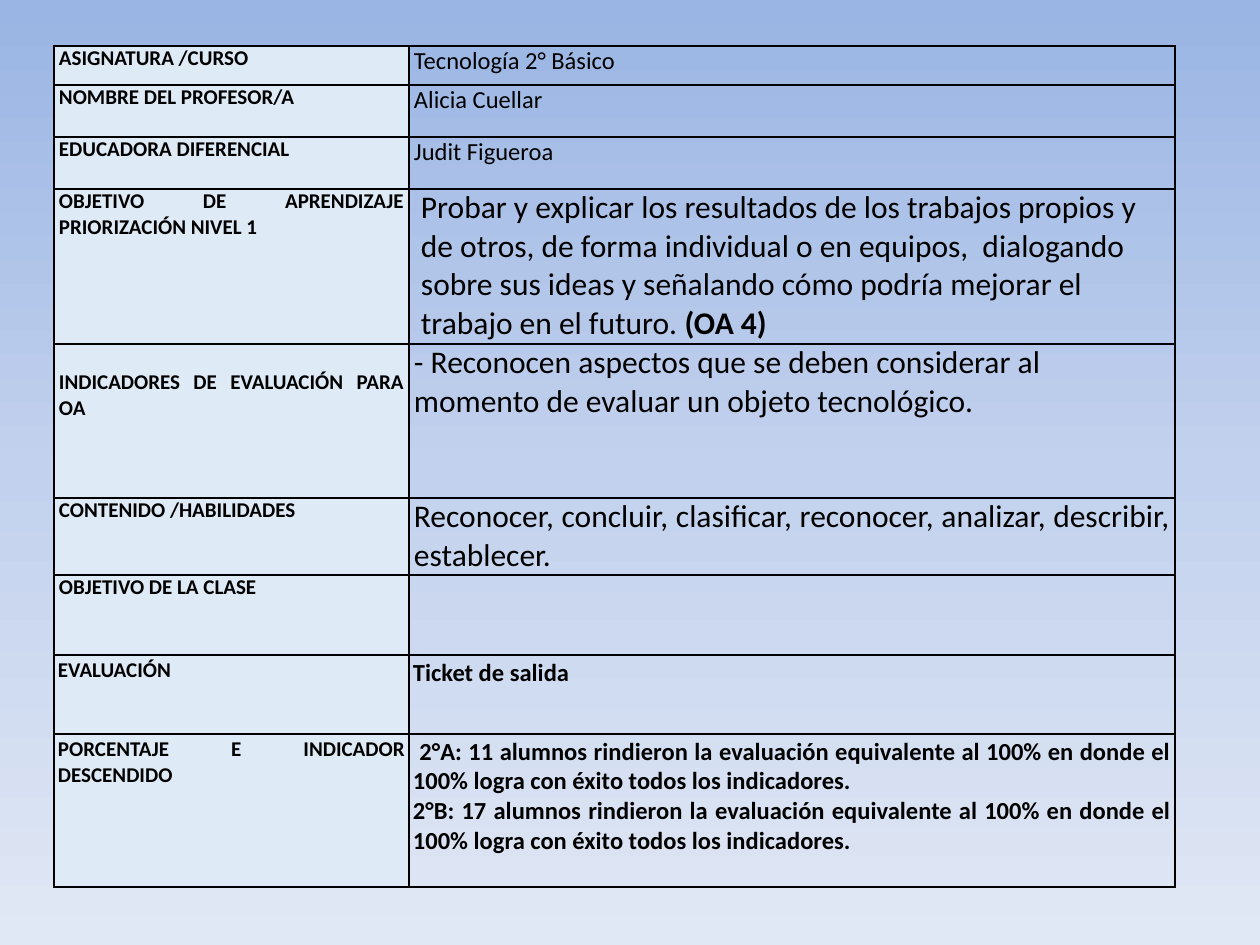
from lxml import etree
from pptx import Presentation
from pptx.dml.color import RGBColor
from pptx.enum.text import PP_ALIGN
from pptx.oxml import parse_xml
from pptx.oxml.ns import qn
from pptx.util import Emu, Pt

LEFT, JUSTIFY = PP_ALIGN.LEFT, PP_ALIGN.JUSTIFY
PX = 914400 // 126
FONT, BLACK, LABEL_FILL = "Calibri", "000000", "DEEAF6"
BACKGROUND = [(0, "9AB5E4"), (50, "C2D1ED"), (100, "E1E8F5")]

TABLE_LEFT, TABLE_TOP = 54, 46
COLUMNS = [355, 766]
SIDE, NARROW, WIDE = (5, 0), (4, 3), (12, 0)  # horizontal, vertical cell margins

# Each paragraph is a list of (text, bold) runs
ROWS = [
    dict(height=39, label="ASIGNATURA /CURSO", size=14,
         value=[[("Tecnología 2° Básico", False)]]),
    dict(height=52, label="NOMBRE DEL PROFESOR/A", size=14,
         value=[[("Alicia Cuellar", False)]]),
    dict(height=52, label="EDUCADORA DIFERENCIAL", size=14,
         value=[[("Judit Figueroa", False)]]),
    dict(height=155, label="OBJETIVO DE APRENDIZAJE PRIORIZACIÓN NIVEL 1",
         size=18, align=LEFT, value_margins=WIDE,
         value=[[("Probar y explicar los resultados de los trabajos propios y "
                  "de otros, de forma individual o en equipos,  dialogando "
                  "sobre sus ideas y señalando cómo podría mejorar el "
                  "trabajo en el futuro. ", False), ("(OA 4)", True)]]),
    dict(height=154, label="INDICADORES DE EVALUACIÓN PARA OA",
         label_margins=(5, 26), size=18, align=LEFT,
         value=[[("- Reconocen aspectos que se deben considerar al momento "
                  "de evaluar un objeto tecnológico.", False)]]),
    dict(height=76, label="CONTENIDO /HABILIDADES", size=18,
         value=[[("Reconocer, concluir, clasificar, reconocer, analizar, "
                  "describir, establecer.", False)]]),
    dict(height=80, label="OBJETIVO DE LA CLASE", size=18, value=[]),
    dict(height=79, label="EVALUACIÓN", label_margins=NARROW,
         value_margins=NARROW, size=14, value=[[("Ticket de salida", True)]]),
    dict(height=153, label="PORCENTAJE E INDICADOR DESCENDIDO",
         label_margins=NARROW, value_margins=NARROW, size=14,
         value=[[(f"{group} alumnos rindieron la evaluación equivalente al "
                  "100% en donde el 100% logra con éxito todos los "
                  "indicadores.", True)] for group in (" 2°A: 11", "2°B: 17")]),
]


def px(n):
    return Emu(n * PX)


def rgb(color):
    return RGBColor.from_string(color)


def set_background(s):
    """Vertical gradient through the BACKGROUND stops."""
    stops = "".join(f'<a:gs pos="{pos * 1000}"><a:srgbClr val="{color}"/></a:gs>'
                    for pos, color in BACKGROUND)
    s.element.cSld.insert(0, parse_xml(
        '<p:bg xmlns:p="http://schemas.openxmlformats.org/presentationml/2006/main" '
        'xmlns:a="http://schemas.openxmlformats.org/drawingml/2006/main">'
        f'<p:bgPr><a:gradFill rotWithShape="1"><a:gsLst>{stops}</a:gsLst>'
        '<a:lin ang="5400000" scaled="0"/></a:gradFill><a:effectLst/></p:bgPr></p:bg>'))


def add_borders(cell):
    tc_pr = cell._tc.get_or_add_tcPr()
    for side in ("lnL", "lnR", "lnT", "lnB"):
        line = etree.SubElement(tc_pr, qn(f"a:{side}"), w=str(Pt(1)))
        fill = etree.SubElement(line, qn("a:solidFill"))
        etree.SubElement(fill, qn("a:srgbClr"), val=BLACK)


def fill_cell(cell, paragraphs, size, align, margins, color=None):
    add_borders(cell)
    if color:
        cell.fill.solid()
        cell.fill.fore_color.rgb = rgb(color)
    else:
        cell.fill.background()
    across, down = margins
    cell.margin_left = cell.margin_right = px(across)
    cell.margin_top, cell.margin_bottom = px(down), 0
    tf = cell.text_frame
    for i, runs in enumerate(paragraphs):
        p = tf.add_paragraph() if i else tf.paragraphs[0]
        p.alignment = align
        for text, bold in runs:
            r = p.add_run()
            r.text = text
            r.font.color.rgb = rgb(BLACK)
            for name, value in dict(name=FONT, size=Pt(size), bold=bold).items():
                setattr(r.font, name, value)


prs = Presentation()
prs.slide_width, prs.slide_height = px(1260), px(945)
s = prs.slides.add_slide(prs.slide_layouts[6])
set_background(s)

total_height = sum(row["height"] for row in ROWS)
table = s.shapes.add_table(len(ROWS), len(COLUMNS), px(TABLE_LEFT), px(TABLE_TOP),
                           px(sum(COLUMNS)), px(total_height)).table
table.first_row = table.horz_banding = False
for column, width in zip(table.columns, COLUMNS):
    column.width = px(width)
for i, row in enumerate(ROWS):
    table.rows[i].height = px(row["height"])
    fill_cell(table.cell(i, 0), [[(row["label"], True)]], 12, JUSTIFY,
              row.get("label_margins", SIDE), LABEL_FILL)
    fill_cell(table.cell(i, 1), row["value"], row["size"], row.get("align", JUSTIFY),
              row.get("value_margins", SIDE))

prs.save("out.pptx")
